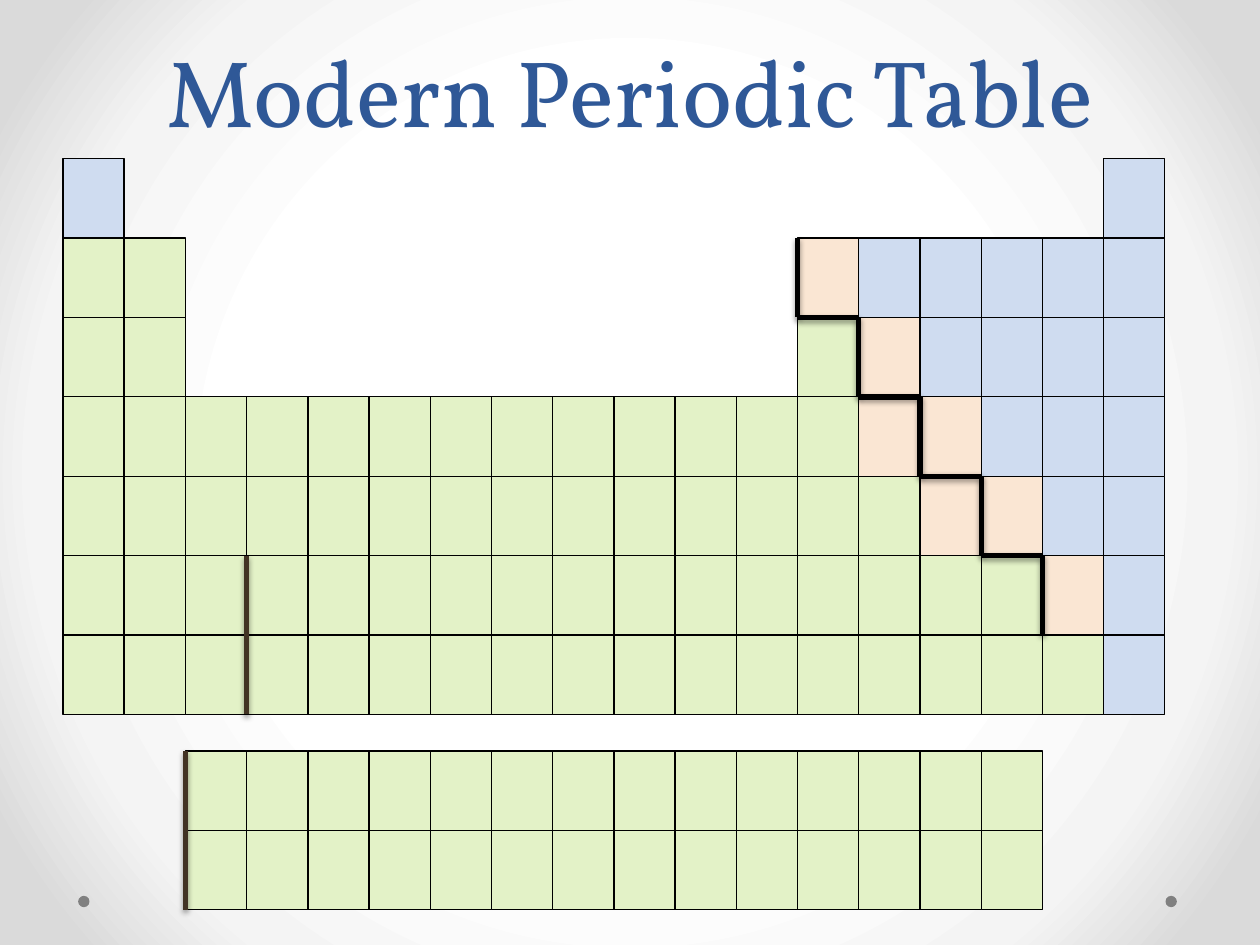
from pptx import Presentation
from pptx import oxml
from pptx import util as u
from pptx.dml.color import RGBColor
from pptx.enum import shapes, text
from pptx.oxml import ns

BLACK = RGBColor(0x00, 0x00, 0x00)
BROWN = RGBColor(0x42, 0x33, 0x24)
GRAY = RGBColor(0x80, 0x80, 0x80)
TITLE_BLUE = RGBColor(0x2F, 0x58, 0x97)
METAL = RGBColor(0xE3, 0xF2, 0xC7)
METALLOID = RGBColor(0xFA, 0xE6, 0xD3)
NONMETAL = RGBColor(0xCF, 0xDC, 0xF0)

ELEMENT_FILLS = {"M": METAL, "S": METALLOID, "N": NONMETAL}
MAIN_TABLE = [
    "N" + "." * 16 + "N",
    "MM" + "." * 10 + "SNNNNN",
    "MM" + "." * 10 + "MSNNNN",
    "M" * 13 + "SSNNN",
    "M" * 14 + "SSNN",
    "M" * 16 + "SN",
    "M" * 17 + "N",
]
INNER_TRANSITION = [".." + "M" * 14] * 2

LEFT = u.Inches(0.5)
MAIN_TOP = u.Inches(1.26)
INNER_TOP = u.Inches(5.96)
GROUP_WIDTH = u.Inches(8.26) / 17
PERIOD_HEIGHT = u.Inches(0.63)

BACKGROUND_STOPS = [(50, "FFFFFF"), (76, "F4F4F4"), (92, "DADADA")]


def write_text(frame, wording, font="Vollkorn", size=54, color=TITLE_BLUE,
               align=text.PP_ALIGN.CENTER, spacing=58):
    paragraph = frame.paragraphs[0]
    paragraph.alignment = align
    paragraph.line_spacing = u.Pt(spacing)
    run = paragraph.add_run()
    run.text = wording
    run.font.name = font
    run.font.size = u.Pt(size)
    run.font.color.rgb = color


def group_x(group):
    return round(LEFT + group * GROUP_WIDTH)


def period_y(period, top=MAIN_TOP):
    return top + period * PERIOD_HEIGHT


class PeriodicSlide:
    border = 0.75
    divider = 3

    def __init__(self, slide):
        self.slide = slide

    def background(self, stops):
        self.slide.background.fill.solid()
        solid = self.slide.element.xpath(".//p:bgPr/a:solidFill")[0]
        stop_list = "".join(
            f'<a:gs pos="{position * 1000}"><a:srgbClr val="{color}"/></a:gs>'
            for position, color in stops)
        gradient = oxml.parse_xml(
            f'<a:gradFill {ns.nsdecls("a")} rotWithShape="1">'
            f'<a:gsLst>{stop_list}</a:gsLst><a:path path="circle">'
            '<a:fillToRect l="50000" t="50000" r="50000" b="50000"/>'
            '</a:path></a:gradFill>')
        solid.getparent().replace(solid, gradient)

    def title(self, wording, left, top, width, height):
        frame = self.slide.shapes.add_textbox(left, top, width, height).text_frame
        frame.word_wrap = True
        frame.vertical_anchor = text.MSO_ANCHOR.BOTTOM
        write_text(frame, wording)

    def dot(self, left, top, size):
        dot = self.slide.shapes.add_shape(
            shapes.MSO_SHAPE.OVAL, left, top, size, size)
        dot.shadow.inherit = False
        dot.fill.solid()
        dot.fill.fore_color.rgb = GRAY
        dot.line.fill.background()

    def cell(self, left, top, right, fill):
        cell = self.slide.shapes.add_shape(
            shapes.MSO_SHAPE.RECTANGLE, left, top, right - left, PERIOD_HEIGHT)
        cell.shadow.inherit = False
        cell.fill.solid()
        cell.fill.fore_color.rgb = fill
        cell.line.color.rgb = BLACK
        cell.line.width = u.Pt(self.border)

    def block(self, periods, top):
        for period, row in enumerate(periods):
            for group, kind in enumerate(row):
                if kind in ELEMENT_FILLS:
                    self.cell(group_x(group), period_y(period, top),
                              group_x(group + 1), ELEMENT_FILLS[kind])

    def line(self, x1, y1, x2, y2, color=BLACK):
        line = self.slide.shapes.add_connector(
            shapes.MSO_CONNECTOR.STRAIGHT, x1, y1, x2, y2)
        line.line.color.rgb = color
        line.line.width = u.Pt(self.divider)
        line._element.spPr.append(oxml.parse_xml(
            f'<a:effectLst {ns.nsdecls("a")}>'
            f'<a:outerShdw blurRad="{u.Pt(3.1)}" dist="{u.Pt(1.6)}" '
            'dir="5400000" rotWithShape="0"><a:srgbClr val="000000">'
            '<a:alpha val="38000"/></a:srgbClr></a:outerShdw></a:effectLst>'))

    def staircase(self, group, period, steps):
        for step in range(steps):
            x, right = group_x(group + step), group_x(group + step + 1)
            y, bottom = period_y(period + step), period_y(period + step + 1)
            self.line(x, y, x, bottom)
            if step < steps - 1:
                self.line(x, bottom, right, bottom)


def main():
    deck = Presentation()
    deck.slide_width, deck.slide_height = u.Inches(10), u.Inches(7.5)
    page = PeriodicSlide(deck.slides.add_slide(deck.slide_layouts[6]))

    page.background(BACKGROUND_STOPS)
    for dot_left in (9.25, 0.62):
        page.dot(u.Inches(dot_left), u.Inches(7.11), u.Inches(0.09))
    page.title("Modern Periodic Table",
               u.Inches(0.5), u.Inches(0.01), u.Inches(9), u.Inches(1.2))

    page.block(MAIN_TABLE, MAIN_TOP)
    page.block(INNER_TRANSITION, INNER_TOP)
    page.staircase(group=12, period=1, steps=5)
    for group, top, period in ((3, MAIN_TOP, 5), (2, INNER_TOP, 0)):
        page.line(group_x(group), period_y(period, top),
                  group_x(group), period_y(period + 2, top), BROWN)

    deck.save("out.pptx")


if __name__ == "__main__":
    main()
